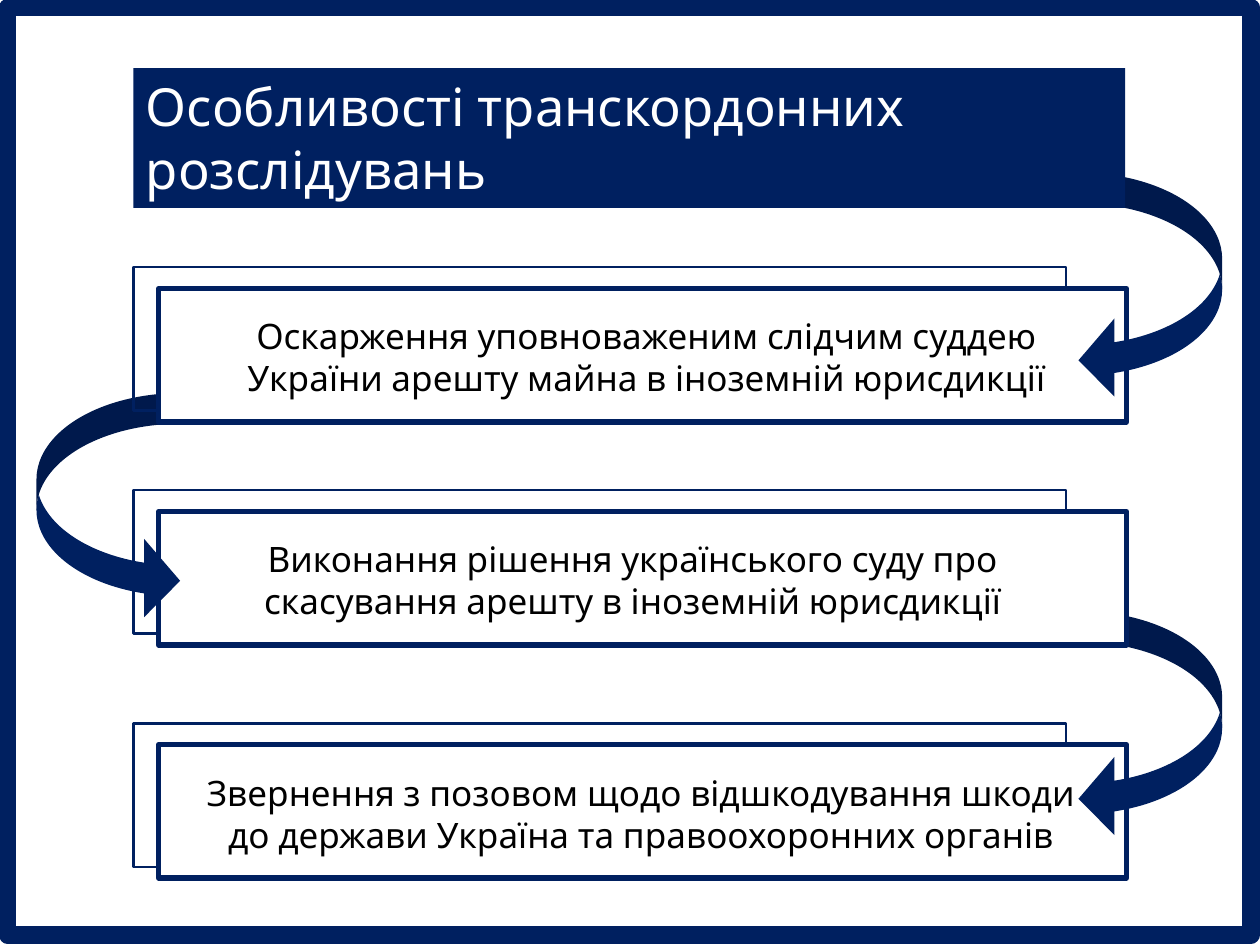
from dataclasses import dataclass

from pptx import Presentation
from pptx.dml.color import RGBColor
from pptx.enum.shapes import MSO_SHAPE
from pptx.enum.text import MSO_ANCHOR, MSO_AUTO_SIZE, PP_ALIGN
from pptx.shapes.autoshape import Shape
from pptx.shapes.shapetree import GroupShapes, SlideShapes
from pptx.util import Inches, Pt

NAVY = RGBColor(0x00, 0x20, 0x60)
WHITE = RGBColor(0xFF, 0xFF, 0xFF)
BLACK = RGBColor(0x00, 0x00, 0x00)
FONT_NAME = "League Spartan"


@dataclass(frozen=True)
class Box:
    left: float
    top: float
    width: float
    height: float

    def lengths(self) -> list[int]:
        return [Inches(value) for value in (self.left, self.top, self.width, self.height)]


@dataclass(frozen=True)
class Card:
    top: float
    text_left: float
    text_width: float
    lines: tuple[str, ...]


@dataclass(frozen=True)
class Arrow:
    left: float
    top: float
    flipped: bool = False


APPEAL = Card(2.12, 1.43, 7.4, (
    "Оскарження уповноваженим слідчим суддею України арешту майна в іноземній юрисдикції",
))
EXECUTION = Card(3.89, 1.58, 6.88, (
    "Виконання рішення українського суду про скасування арешту в іноземній юрисдикції",
))
CLAIM = Card(5.74, 1.43, 7.31, (
    "Звернення з позовом щодо відшкодування шкоди",
    "до держави Україна та правоохоронних органів",
))


def add_panel(
    shapes: SlideShapes | GroupShapes,
    box: Box,
    kind: MSO_SHAPE = MSO_SHAPE.RECTANGLE,
    fill: RGBColor | None = None,
    line_width: float = 0,
) -> Shape:
    shape = shapes.add_shape(kind, *box.lengths())
    shape.shadow.inherit = False
    if fill is None:
        shape.fill.background()
    else:
        shape.fill.solid()
        shape.fill.fore_color.rgb = fill
    if line_width:
        shape.line.color.rgb = NAVY
        shape.line.width = Pt(line_width)
    else:
        shape.line.fill.background()
    return shape


def write_text(
    shape: Shape,
    *lines: str,
    size: float,
    color: RGBColor,
    alignment: PP_ALIGN,
) -> None:
    frame = shape.text_frame
    frame.word_wrap = True
    frame.auto_size = MSO_AUTO_SIZE.SHAPE_TO_FIT_TEXT
    frame.vertical_anchor = MSO_ANCHOR.TOP
    frame.text = "\n".join(lines)
    for paragraph in frame.paragraphs:
        paragraph.alignment = alignment
        paragraph.font.name = FONT_NAME
        paragraph.font.size = Pt(size)
        paragraph.font.color.rgb = color


def add_card(shapes: SlideShapes, card: Card) -> None:
    group = shapes.add_group_shape()
    add_panel(group.shapes, Box(1.06, card.top, 7.4, 1.14), line_width=1.5)
    add_panel(group.shapes, Box(1.26, card.top + 0.17, 7.68, 1.06), fill=WHITE, line_width=3)
    text_box = Box(card.text_left, card.top + 0.33, card.text_width, 0.77)
    label = group.shapes.add_textbox(*text_box.lengths())
    write_text(label, *card.lines, size=20, color=BLACK, alignment=PP_ALIGN.CENTER)


def add_arrow(shapes: SlideShapes, arrow: Arrow) -> None:
    box = Box(arrow.left, arrow.top, 1.14, 1.8)
    shape = add_panel(shapes, box, kind=MSO_SHAPE.CURVED_LEFT_ARROW, fill=NAVY)
    for index, value in enumerate((0.214, 0.544, 0.25)):
        shape.adjustments[index] = value
    if arrow.flipped:
        shape.element.spPr.xfrm.set("flipH", "1")


def main() -> None:
    presentation = Presentation()
    presentation.slide_width = Inches(10)
    presentation.slide_height = Inches(7.5)
    slide = presentation.slides.add_slide(presentation.slide_layouts[6])
    shapes = slide.shapes

    add_card(shapes, CLAIM)
    add_arrow(shapes, Arrow(8.56, 4.85))
    add_card(shapes, EXECUTION)
    add_panel(shapes, Box(0.06, 0.06, 9.87, 7.36), line_width=10)
    add_arrow(shapes, Arrow(0.29, 3.12, flipped=True))
    add_card(shapes, APPEAL)
    add_arrow(shapes, Arrow(8.56, 1.37))

    title = add_panel(shapes, Box(1.06, 0.54, 7.87, 1.11), fill=NAVY)
    write_text(
        title,
        "Особливості транскордонних",
        "розслідувань",
        size=30,
        color=WHITE,
        alignment=PP_ALIGN.LEFT,
    )
    presentation.save("out.pptx")


if __name__ == "__main__":
    main()
